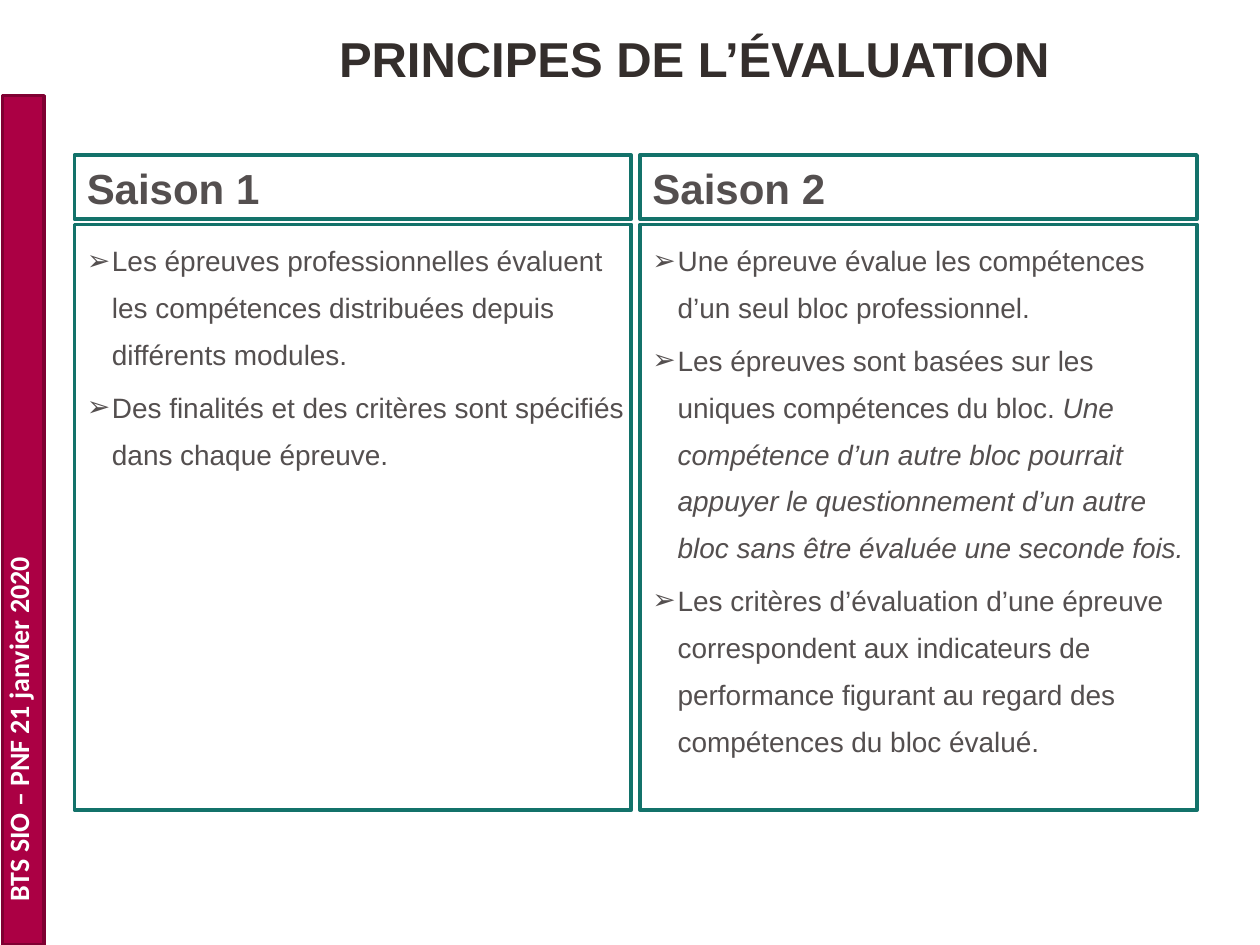
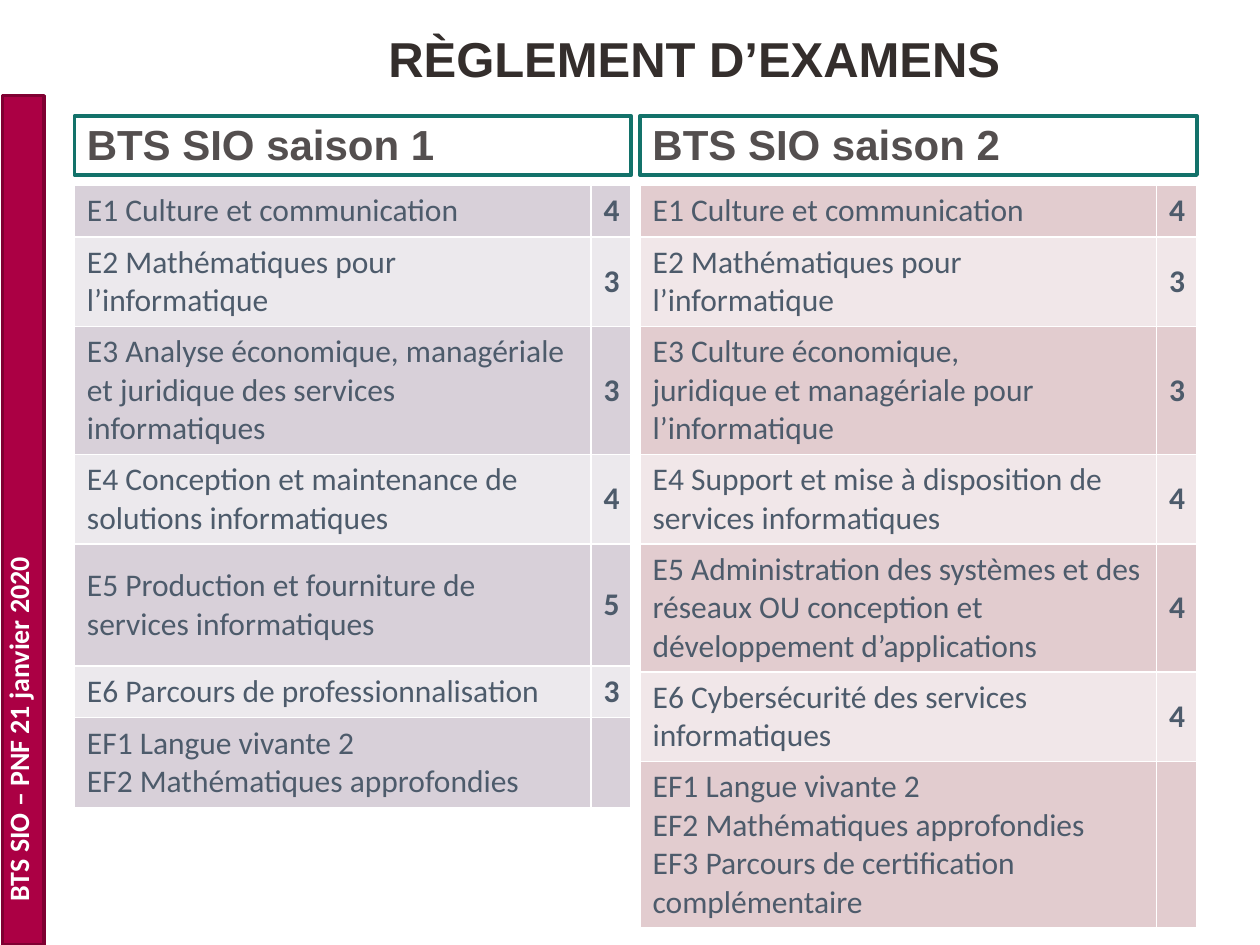
from lxml.etree import SubElement
from pptx import Presentation
from pptx.dml.color import RGBColor
from pptx.enum.shapes import MSO_SHAPE as SHAPE
from pptx.enum.text import MSO_ANCHOR as ANCHOR, MSO_AUTO_SIZE as AUTO, PP_ALIGN as ALIGN
from pptx.oxml.ns import qn
from pptx.util import Inches, Pt

COLORS = {
    "band": "AB0044", "band_line": "7F0032", "white": "FFFFFF",
    "title": "342E2C", "text": "544F4F", "frame": "13726A", "cell": "4D5B6B",
}
BAND_TEXT = "BTS SIO – PNF 21 janvier 2020"
COLUMN_X = (0.59, 5.08)
COLUMN_W = 4.42
MARK_W = 0.32
ROW_H = 0.41

PRINCIPLES = {
    "title": "PRINCIPES DE L’ÉVALUATION",
    "columns": [
        ("Saison 1", [
            [("Les épreuves professionnelles évaluent les compétences distribuées depuis différents modules.", False)],
            [("Des finalités et des critères sont spécifiés dans chaque épreuve.", False)],
        ]),
        ("Saison 2", [
            [("Une épreuve évalue les compétences d’un seul bloc professionnel.", False)],
            [("Les épreuves sont basées sur les uniques compétences du bloc. ", False),
             ("Une compétence d’un autre bloc pourrait appuyer le questionnement d’un autre bloc "
              "sans être évaluée une seconde fois.", True)],
            [("Les critères d’évaluation d’une épreuve correspondent aux indicateurs de performance "
              "figurant au regard des compétences du bloc évalué.", False)],
        ]),
    ],
}

EXAMS = {
    "title": "RÈGLEMENT D’EXAMENS",
    "columns": [
        ("BTS SIO saison 1", ("D8D0D9", "ECE9ED"), {4: 0.97}, [
            (["E1 Culture et communication"], "4"),
            (["E2 Mathématiques pour l’informatique"], "3"),
            (["E3 Analyse économique, managériale et juridique des services informatiques"], "3"),
            (["E4 Conception et maintenance de solutions informatiques"], "4"),
            (["E5 Production et fourniture de services informatiques"], "5"),
            (["E6 Parcours de professionnalisation"], "3"),
            (["EF1 Langue vivante 2", "EF2 Mathématiques approfondies"], ""),
        ]),
        ("BTS SIO saison 2", ("E2CCCF", "F1E7E9"), {}, [
            (["E1 Culture et communication"], "4"),
            (["E2 Mathématiques pour l’informatique"], "3"),
            (["E3 Culture économique,", "juridique et managériale pour", "l’informatique"], "3"),
            (["E4 Support et mise à disposition de services informatiques"], "4"),
            (["E5 Administration des systèmes et des réseaux OU conception et "
              "développement d’applications"], "4"),
            (["E6 Cybersécurité des services", "informatiques"], "4"),
            (["EF1 Langue vivante 2", "EF2 Mathématiques approfondies",
              "EF3 Parcours de certification complémentaire"], ""),
        ]),
    ],
}


def rgb(value):
    return RGBColor.from_string(COLORS.get(value, value))


def box(*lengths):
    return [Inches(n) for n in lengths]


def add_run(p, text, size, color, font="Arial", bold=False, italic=False):
    r = p.add_run()
    r.text = text
    f = r.font
    f.name, f.size, f.bold, f.italic = font, Pt(size), bold, italic
    f.color.rgb = rgb(color)


def add_rect(s, place, line, fill=None):
    sp = s.shapes.add_shape(SHAPE.RECTANGLE, *box(*place))
    sp.shadow.inherit = False
    if fill:
        sp.fill.solid()
        sp.fill.fore_color.rgb = rgb(fill)
    else:
        sp.fill.background()
    sp.line.color.rgb = rgb(line)
    sp.line.width = Pt(2)
    return sp


def add_slide(prs, title):
    s = prs.slides.add_slide(prs.slide_layouts[5])
    add_rect(s, (0.02, 0.76, 0.33, 6.74), "band_line", "band")
    tf = s.shapes.add_textbox(*box(-0.04, 0.35, 0.47, 6.9)).text_frame
    tf.word_wrap = True
    tf._txBody.bodyPr.set("vert", "vert270")
    add_run(tf.paragraphs[0], BAND_TEXT, 16, "white", "Calibri", bold=True)

    sp = s.shapes.title
    sp.left, sp.top, sp.width, sp.height = box(1.01, 0, 9, 0.92)
    tf = sp.text_frame
    tf.auto_size = AUTO.NONE
    tf.vertical_anchor = ANCHOR.MIDDLE
    p = tf.paragraphs[0]
    p.alignment = ALIGN.CENTER
    add_run(p, title, 28, "title", bold=True)
    return s


def add_frame(s, place, anchor):
    tf = add_rect(s, place, "frame").text_frame
    tf.word_wrap = True
    tf.vertical_anchor = anchor
    tf.margin_right = Inches(0.05)
    tf.paragraphs[0].alignment = ALIGN.LEFT
    return tf


def add_heading(s, x, y, h, text):
    tf = add_frame(s, (x, y, COLUMN_W, h), ANCHOR.BOTTOM)
    add_run(tf.paragraphs[0], text, 24, "text", bold=True)


def add_bullets(s, x, items):
    tf = add_frame(s, (x, 1.78, COLUMN_W, 4.65), ANCHOR.TOP)
    for i, runs in enumerate(items):
        p = tf.add_paragraph() if i else tf.paragraphs[0]
        p.alignment = ALIGN.LEFT
        p.line_spacing = 1.4
        if i:
            p.space_before = Pt(3)
        pPr = p._p.get_or_add_pPr()
        pPr.set("marL", str(Inches(0.2)))
        pPr.set("indent", str(Inches(-0.2)))
        SubElement(pPr, qn("a:buFont"), typeface="Arial")
        SubElement(pPr, qn("a:buChar"), char="➢")
        for text, italic in runs:
            add_run(p, text, 16, "text", italic=italic)


def fill_cell(cell, lines, fill, align, bold):
    tcPr = cell._tc.get_or_add_tcPr()
    for side in ("lnL", "lnR", "lnT", "lnB"):
        ln = SubElement(tcPr, qn(f"a:{side}"), w=str(Pt(1)))
        SubElement(SubElement(ln, qn("a:solidFill")), qn("a:srgbClr"), val=COLORS["white"])
    cell.fill.solid()
    cell.fill.fore_color.rgb = rgb(fill)
    cell.vertical_anchor = ANCHOR.MIDDLE
    tf = cell.text_frame
    for i, line in enumerate(lines):
        p = tf.add_paragraph() if i else tf.paragraphs[0]
        p.alignment = align
        if line:
            add_run(p, line, 18, "cell", "Calibri", bold)


def add_exam_table(s, x, fills, tall_rows, rows):
    heights = [tall_rows.get(i, ROW_H) for i in range(len(rows))]
    place = box(x, 1.47, COLUMN_W, sum(heights))
    table = s.shapes.add_table(len(rows), 2, *place).table
    table.first_row = table.horz_banding = False
    table.columns[0].width, table.columns[1].width = box(COLUMN_W - MARK_W, MARK_W)
    for i, (lines, mark) in enumerate(rows):
        table.rows[i].height = Inches(heights[i])
        fill = fills[i % 2]
        fill_cell(table.cell(i, 0), lines, fill, ALIGN.LEFT, False)
        fill_cell(table.cell(i, 1), [mark], fill, ALIGN.CENTER, True)


def main():
    prs = Presentation()
    prs.slide_width, prs.slide_height = box(10, 7.5)

    s = add_slide(prs, PRINCIPLES["title"])
    for x, (heading, items) in zip(COLUMN_X, PRINCIPLES["columns"]):
        add_heading(s, x, 1.23, 0.51, heading)
        add_bullets(s, x, items)

    s = add_slide(prs, EXAMS["title"])
    for x, (heading, fills, tall_rows, rows) in zip(COLUMN_X, EXAMS["columns"]):
        add_heading(s, x, 0.92, 0.47, heading)
        add_exam_table(s, x, fills, tall_rows, rows)

    prs.save("out.pptx")


if __name__ == "__main__":
    main()
